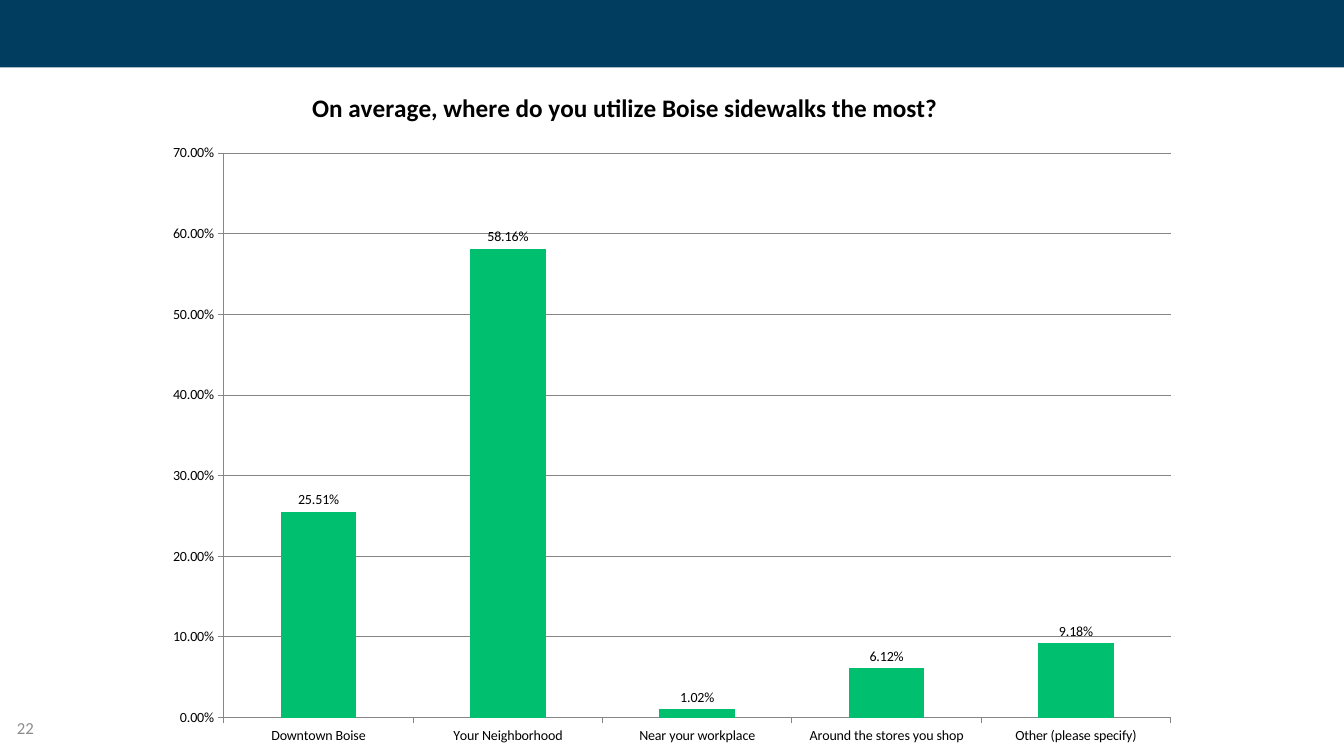
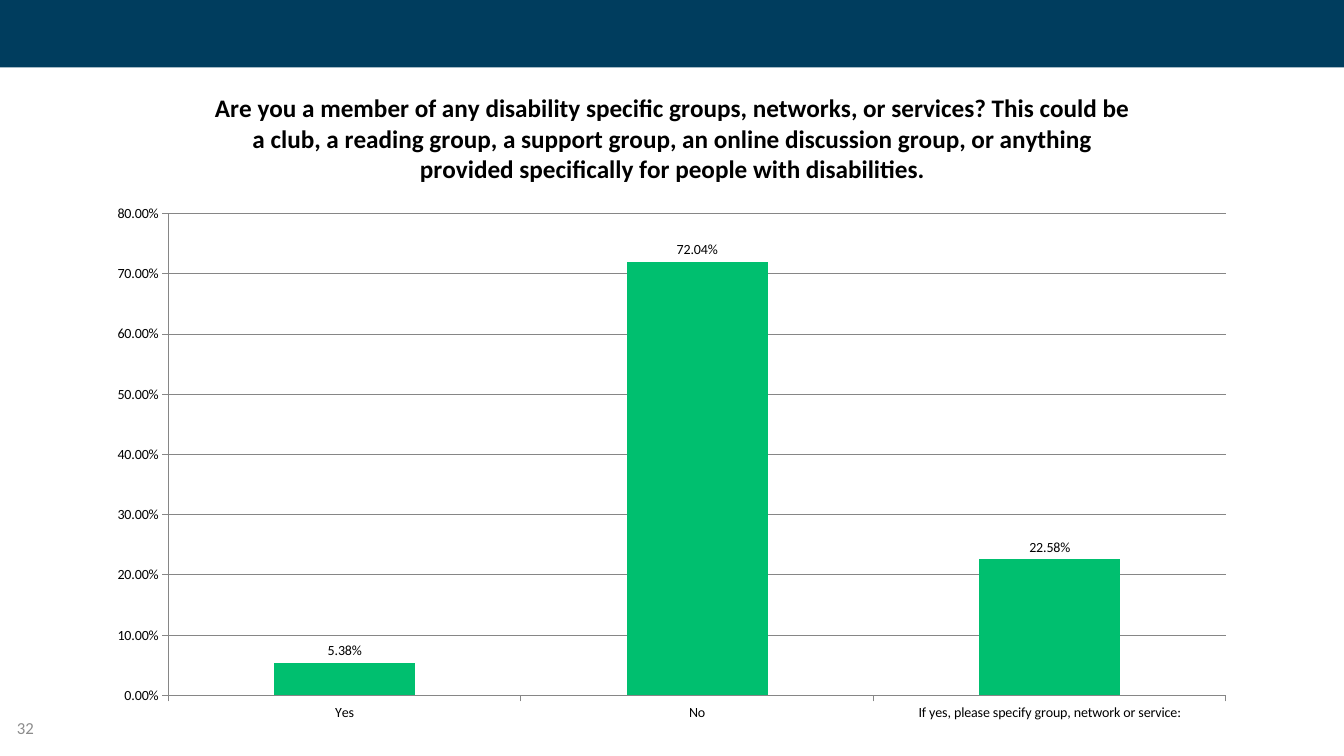
from dataclasses import dataclass
from typing import Optional

import pptx
import pptx.chart.data
import pptx.dml.color
import pptx.enum.chart
import pptx.enum.shapes
import pptx.enum.text
import pptx.oxml.ns
import pptx.util
from lxml import etree

Inches = pptx.util.Inches
Pt = pptx.util.Pt
qn = pptx.oxml.ns.qn

# Shared style
FONT = "Calibri"
NAVY, GREEN, BLACK = "003D5E", "00BF6F", "000000"
NUMBER_GRAY, LINE_GRAY = "8C8C8C", "868686"
PERCENT = "0.00%"
PAGE_WIDTH, PAGE_HEIGHT, BAND_HEIGHT = 13.33, 7.5, 0.67


@dataclass(frozen=True)
class Area:
    """A rectangle on the page, in inches."""
    left: float
    top: float
    width: float
    height: float

    def lengths(self) -> tuple:
        return tuple(map(Inches, (self.left, self.top, self.width, self.height)))


@dataclass(frozen=True)
class Question:
    number: str
    title: str
    answers: dict[str, float]
    top_value: float
    frame: Area
    plot: Area
    title_at: Optional[tuple[float, float]] = None  # None centres the title


QUESTIONS = [
    Question(
        "22",
        "On average, where do you utilize Boise sidewalks the most?",
        {
            "Downtown Boise": 0.2551,
            "Your Neighborhood": 0.5816,
            "Near your workplace": 0.0102,
            "Around the stores you shop": 0.0612,
            "Other (please specify)": 0.0918,
        },
        0.7,
        Area(1.52, 0.67, 10.29, 6.85),
        Area(2.22, 1.52, 9.39, 5.6),
        (3.05, 0.85),
    ),
    Question(
        "32",
        "Are you a member of any disability specific groups, networks, or services? "
        "This could be a club, a reading group, a support group, an online discussion "
        "group, or anything provided specifically for people with disabilities.",
        {
            "Yes": 0.0538,
            "No": 0.7204,
            "If yes, please specify group, network or service:": 0.2258,
        },
        0.8,
        Area(0.94, 0.67, 11.46, 6.62),
        Area(1.67, 2.12, 10.49, 4.78),
    ),
]


def color(value: str) -> pptx.dml.color.RGBColor:
    return pptx.dml.color.RGBColor.from_string(value)


def style_font(font, size: float, value: str, bold: bool = False) -> None:
    font.name, font.size, font.bold = FONT, Pt(size), bold
    font.color.rgb = color(value)


def add_band(page) -> None:
    band = page.shapes.add_shape(
        pptx.enum.shapes.MSO_SHAPE.RECTANGLE,
        *Area(0, 0, PAGE_WIDTH, BAND_HEIGHT).lengths())
    band.shadow.inherit = False
    band.fill.solid()
    band.fill.fore_color.rgb = color(NAVY)
    band.line.fill.background()


def add_page_number(page, number: str) -> None:
    box = page.shapes.add_textbox(*Area(0.07, 7.02, 0.83, 0.4).lengths())
    frame = box.text_frame
    frame.word_wrap = True
    frame.vertical_anchor = pptx.enum.text.MSO_ANCHOR.MIDDLE
    span = frame.paragraphs[0].add_run()
    span.text = number
    style_font(span.font, 12, NUMBER_GRAY)


def place(element, index: int, settings: dict) -> None:
    """Give a chart part a manual layout as its child at the index."""
    for old in element.findall(qn("c:layout")):
        element.remove(old)
    layout = etree.Element(qn("c:layout"))
    manual = etree.SubElement(layout, qn("c:manualLayout"))
    for name, value in settings.items():
        etree.SubElement(manual, qn(f"c:{name}")).set("val", str(value))
    element.insert(index, layout)


def add_title(chart, question: Question) -> None:
    chart.has_title = True
    title = chart.chart_title
    title.include_in_layout = False
    span = title.text_frame.paragraphs[0].add_run()
    span.text = question.title
    style_font(span.font, 18, BLACK, bold=True)
    if question.title_at:
        left, top = question.title_at
        frame = question.frame
        place(title._element, 1, {
            "xMode": "edge", "yMode": "edge",
            "x": (left - frame.left) / frame.width,
            "y": (top - frame.top) / frame.height})


def style_axes(chart, top_value: float) -> None:
    for axis in (chart.category_axis, chart.value_axis):
        axis.major_tick_mark = pptx.enum.chart.XL_TICK_MARK.OUTSIDE
        axis.minor_tick_mark = pptx.enum.chart.XL_TICK_MARK.NONE
        axis.format.line.color.rgb = color(LINE_GRAY)
        axis.format.line.width = Pt(0.75)
        style_font(axis.tick_labels.font, 10, BLACK)
    chart.category_axis.has_major_gridlines = False
    values = chart.value_axis
    values.minimum_scale, values.maximum_scale, values.major_unit = 0, top_value, 0.1
    values.tick_labels.number_format = PERCENT
    values.tick_labels.number_format_is_linked = False
    values.has_major_gridlines = True
    values.major_gridlines.format.line.color.rgb = color(LINE_GRAY)
    values.major_gridlines.format.line.width = Pt(0.75)


def style_columns(chart) -> None:
    columns = chart.plots[0]
    columns.gap_width = 150
    columns.vary_by_categories = False
    series = columns.series[0]
    series.format.fill.solid()
    series.format.fill.fore_color.rgb = color(GREEN)
    series.invert_if_negative = False
    labels = series.data_labels
    labels.show_value = True
    labels.number_format = PERCENT
    labels.number_format_is_linked = False
    labels.position = pptx.enum.chart.XL_LABEL_POSITION.OUTSIDE_END
    style_font(labels.font, 10, BLACK)


def add_answer_chart(page, question: Question) -> None:
    data = pptx.chart.data.CategoryChartData(number_format=PERCENT)
    data.categories = list(question.answers)
    data.add_series("Series 1", list(question.answers.values()))
    chart = page.shapes.add_chart(
        pptx.enum.chart.XL_CHART_TYPE.COLUMN_CLUSTERED,
        *question.frame.lengths(), data).chart
    chart.has_legend = False
    style_font(chart.font, 10, BLACK)
    add_title(chart, question)
    style_axes(chart, question.top_value)
    style_columns(chart)

    # Fix the inner plot area
    frame, plot = question.frame, question.plot
    plot_area = chart._chartSpace.find(f".//{qn('c:plotArea')}")
    place(plot_area, 0, {
        "layoutTarget": "inner", "xMode": "edge", "yMode": "edge",
        "x": (plot.left - frame.left) / frame.width,
        "y": (plot.top - frame.top) / frame.height,
        "w": plot.width / frame.width,
        "h": plot.height / frame.height})


def main() -> None:
    deck = pptx.Presentation()
    deck.slide_width, deck.slide_height = Inches(PAGE_WIDTH), Inches(PAGE_HEIGHT)
    for question in QUESTIONS:
        page = deck.slides.add_slide(deck.slide_layouts[6])
        add_band(page)
        add_page_number(page, question.number)
        add_answer_chart(page, question)
    deck.save("out.pptx")


if __name__ == "__main__":
    main()
